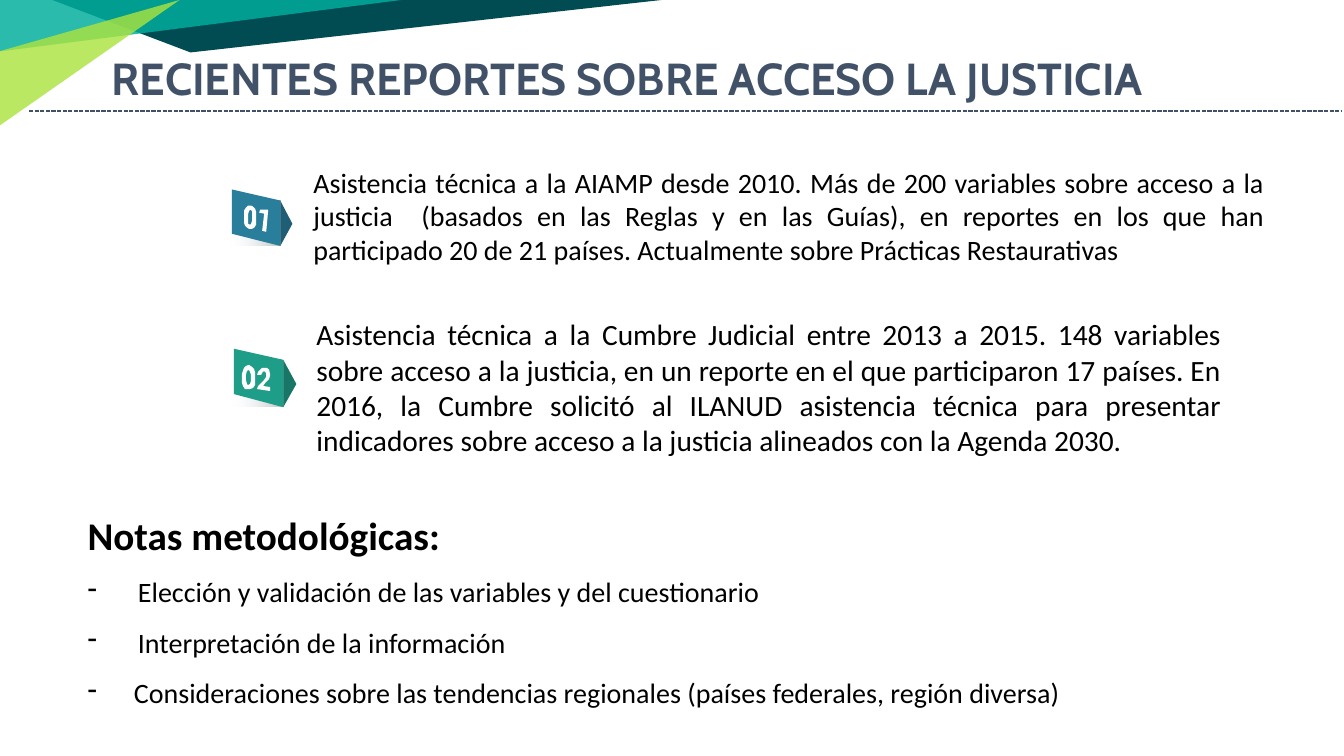
from dataclasses import dataclass
from lxml.etree import SubElement
from pptx import Presentation
from pptx.dml.color import RGBColor
from pptx.enum.dml import MSO_LINE
from pptx.enum.shapes import MSO_CONNECTOR, MSO_SHAPE
from pptx.enum.text import MSO_ANCHOR, MSO_AUTO_SIZE, PP_ALIGN
from pptx.oxml.ns import qn
from pptx.util import Inches, Pt

TITLE = "RECIENTES REPORTES SOBRE ACCESO LA JUSTICIA"
NOTES_HEADING = "Notas metodológicas:"
NOTES = [  # text, hanging indent
    ("Elección y validación de las variables y del cuestionario", 0.5),
    ("Interpretación de la información", 0.5),
    ("Consideraciones sobre las tendencias regionales (países federales, región diversa)", 0.46),
]
REPORTS = [
    dict(text="Asistencia técnica a la AIAMP desde 2010. Más de 200 variables sobre acceso a la "
              "justicia  (basados en las Reglas y en las Guías), en reportes en los que han "
              "participado 20 de 21 países. Actualmente sobre Prácticas Restaurativas",
         box=(3.01, 1.59, 9.63, 1.11), size=20, badge=(2.3, 1.88), scale=1,
         face="297E9B", tip="1F5E74", digit="one", zero_shift=0),
    dict(text="Asistencia técnica a la Cumbre Judicial entre 2013 a 2015. 148 variables sobre "
              "acceso a la justicia, en un reporte en el que participaron 17 países. En 2016, la "
              "Cumbre solicitó al ILANUD asistencia técnica para presentar indicadores sobre "
              "acceso a la justicia alineados con la Agenda 2030.",
         box=(3.04, 3.09, 9.17, 1.5), size=21, badge=(2.32, 3.46), scale=1.03,
         face="1E9D88", tip="177666", digit="two", zero_shift=-4),
]
# Outlines in hundredths of an inch
RIBBONS = [  # points, colour, opacity in percent
    ([(656, 0), (52, 0), (189, 52)], "004C52", 100),
    ([(0, 51), (0, 0), (398, 0)], "00AE9D", 83),
    ([(-1, 51), (-1, 125), (178, 0)], "ABE33F", 81),
]
FACE = [(48, 56), (0, 44), (0, 0), (48, 11)]
TIP = [(48, 11), (60, 34), (48, 56)]
ZERO = [
    [(19, 16), (16, 16.5), (14, 18), (12.5, 21), (12, 24), (12, 29), (12, 33), (13, 36),
     (15, 38.5), (17, 39), (20, 39), (22, 38), (24, 35), (24.5, 31), (24.5, 27), (24, 22),
     (23, 19), (21, 17)],
    [(18, 35), (16.5, 34), (16, 30), (16, 25), (17, 21), (19, 20), (20, 22), (20.5, 25),
     (20.5, 31), (19.5, 34)],
]
DIGITS = {
    "one": [(36, 20), (28, 20), (27, 23), (32, 24), (30, 41), (34, 42)],
    "two": [(30, 18), (27, 18), (25, 20), (23, 22), (22.5, 25), (26.5, 25), (27.5, 23),
            (29.5, 21.5), (31, 23), (31.5, 25), (31, 27), (29, 30), (23, 36), (22, 39),
            (34.5, 41), (35, 37), (28.5, 36), (30.5, 33), (34, 29), (35, 25), (34, 20),
            (32, 18.5)],
}


@dataclass(frozen=True)
class Theme:
    heading_font: str = "Cabin"
    body_font: str = "Calibri"
    slate: str = "415168"
    ink: str = "000000"
    white: str = "FFFFFF"
    shade_start: str = "F3F9FC"
    shade_end: str = "BFBFBF"
    title_size: int = 32
    heading_size: int = 28
    note_size: int = 20


THEME = Theme()


def color(code):
    return RGBColor.from_string(code)


def set_opacity(color_element, percent):
    SubElement(color_element, qn("a:alpha")).set("val", str(percent * 1000))


def place(shape, left, top, width, height):
    shape.left, shape.top = Inches(left), Inches(top)
    shape.width, shape.height = Inches(width), Inches(height)


def style(paragraph, font_name, size, code, bold=False):
    font = paragraph.font
    font.name, font.size, font.bold = font_name, Pt(size), bold
    font.color.rgb = color(code)


def add_outline(slide, contours, code, origin=(0, 0), scale=1, opacity=100):
    """Draw closed contours, given in hundredths of an inch from origin, as one shape."""
    moved = [[(origin[0] * 100 + x * scale, origin[1] * 100 + y * scale) for x, y in contour]
             for contour in contours]
    unit = Inches(0.01)
    builder = slide.shapes.build_freeform(*moved[0][0], scale=unit)
    for number, contour in enumerate(moved):
        if number:
            builder.move_to(*contour[0])
        builder.add_line_segments(contour[1:], close=True)
    shape = builder.convert_to_shape()
    shape.shadow.inherit = False
    shape.line.fill.background()
    shape.fill.solid()
    shape.fill.fore_color.rgb = color(code)
    if opacity < 100:
        set_opacity(shape.fill._xPr.find(".//" + qn("a:srgbClr")), opacity)


def add_title(slide):
    title = slide.shapes.title
    place(title, 1.01, 0.45, 12.32, 0.64)
    frame = title.text_frame
    frame.text = TITLE
    frame.word_wrap = True
    frame.auto_size = MSO_AUTO_SIZE.NONE
    frame.vertical_anchor = MSO_ANCHOR.TOP
    para = frame.paragraphs[0]
    para.alignment = PP_ALIGN.LEFT
    style(para, THEME.heading_font, THEME.title_size, THEME.slate, bold=True)


def add_rule(slide):
    rule = slide.shapes.add_connector(MSO_CONNECTOR.STRAIGHT, Inches(0.29), Inches(1.1),
                                      Inches(13.31), Inches(1.1))
    rule.line.color.rgb = color(THEME.slate)
    rule.line.width = Pt(1)
    rule.line.dash_style = MSO_LINE.SQUARE_DOT
    SubElement(rule._element.spPr, qn("a:effectLst"))


def add_text_box(slide, bounds):
    box = slide.shapes.add_textbox(*map(Inches, bounds))
    box.text_frame.word_wrap = True
    return box.text_frame


def add_badge(slide, report):
    left, top = report["badge"]
    scale = report["scale"]
    shade = slide.shapes.add_shape(MSO_SHAPE.RECTANGLE, 0, 0, 0, 0)
    place(shade, left - 0.01, top + 0.11 * scale, 0.49 * scale, 0.45 * scale)
    shade.shadow.inherit = False
    shade.line.fill.background()
    shade.fill.gradient()
    shade.fill.gradient_angle = 0
    start, end = shade.fill.gradient_stops
    start.color.rgb, end.color.rgb = color(THEME.shade_start), color(THEME.shade_end)
    start.position, end.position = 0, 1
    set_opacity(shade._element.spPr.find(".//" + qn("a:srgbClr")), 0)

    zero = [[(x + report["zero_shift"], y) for x, y in contour] for contour in ZERO]
    parts = [([FACE], report["face"]), ([TIP], report["tip"]),
             (zero, THEME.white), ([DIGITS[report["digit"]]], THEME.white)]
    for contours, code in parts:
        add_outline(slide, contours, code, (left, top), scale)


def add_report(slide, report):
    add_badge(slide, report)
    para = add_text_box(slide, report["box"]).paragraphs[0]
    para.text = report["text"]
    para.alignment = PP_ALIGN.JUSTIFY
    style(para, THEME.body_font, report["size"], THEME.ink)


def add_notes(slide):
    frame = add_text_box(slide, (0.77, 5.02, 10.86, 2.2))
    heading = frame.paragraphs[0]
    heading.text = NOTES_HEADING
    style(heading, THEME.body_font, THEME.heading_size, THEME.ink, bold=True)
    for text, indent in NOTES:
        para = frame.add_paragraph()
        para.text = text
        para.alignment = PP_ALIGN.JUSTIFY
        para.line_spacing = 1.5
        style(para, THEME.body_font, THEME.note_size, THEME.ink)
        properties = para._p.get_or_add_pPr()
        properties.set("marL", str(Inches(indent)))
        properties.set("indent", str(-Inches(indent)))
        bullet = properties.makeelement(qn("a:buChar"), {"char": "-"})
        properties.find(qn("a:defRPr")).addprevious(bullet)


def main():
    deck = Presentation()
    deck.slide_width, deck.slide_height = Inches(13.33), Inches(7.5)
    slide = deck.slides.add_slide(deck.slide_layouts[5])
    add_title(slide)
    add_rule(slide)
    for points, code, opacity in RIBBONS:
        add_outline(slide, [points], code, opacity=opacity)
    add_notes(slide)
    for report in REPORTS:
        add_report(slide, report)
    deck.save("out.pptx")


if __name__ == "__main__":
    main()
